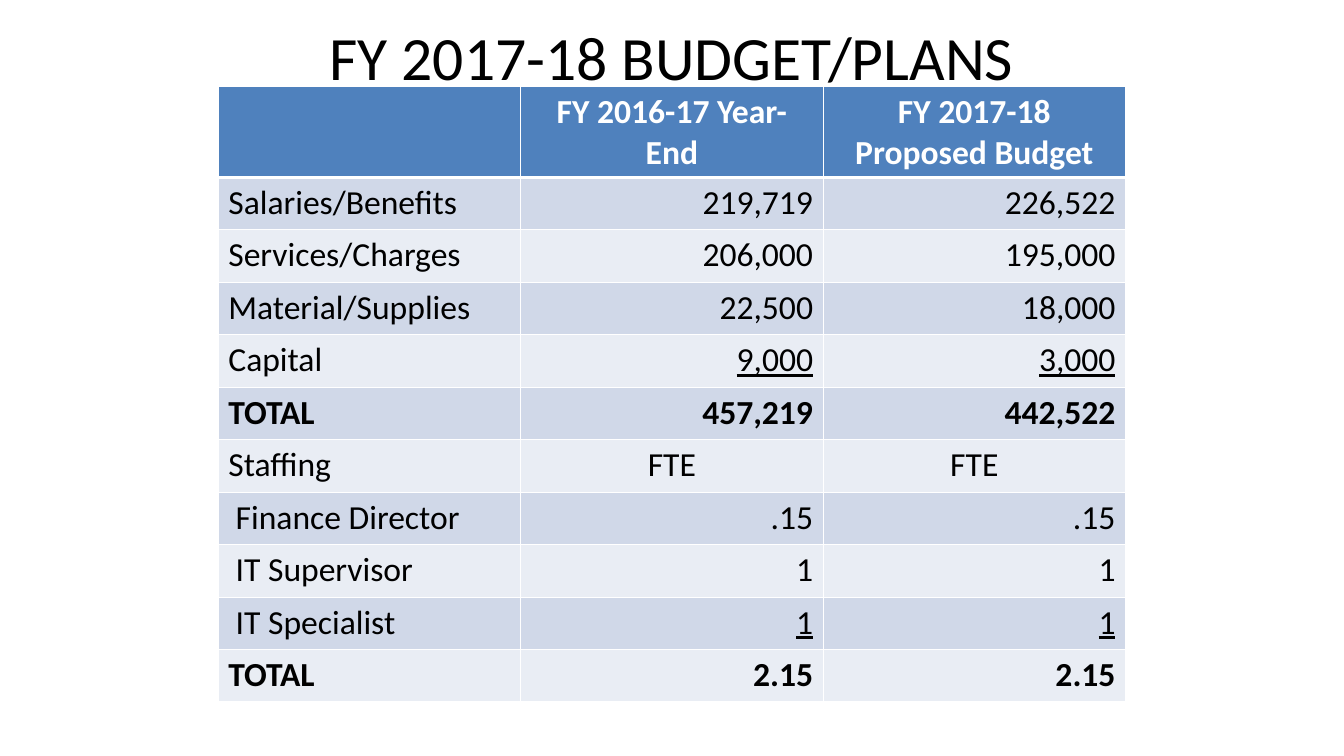
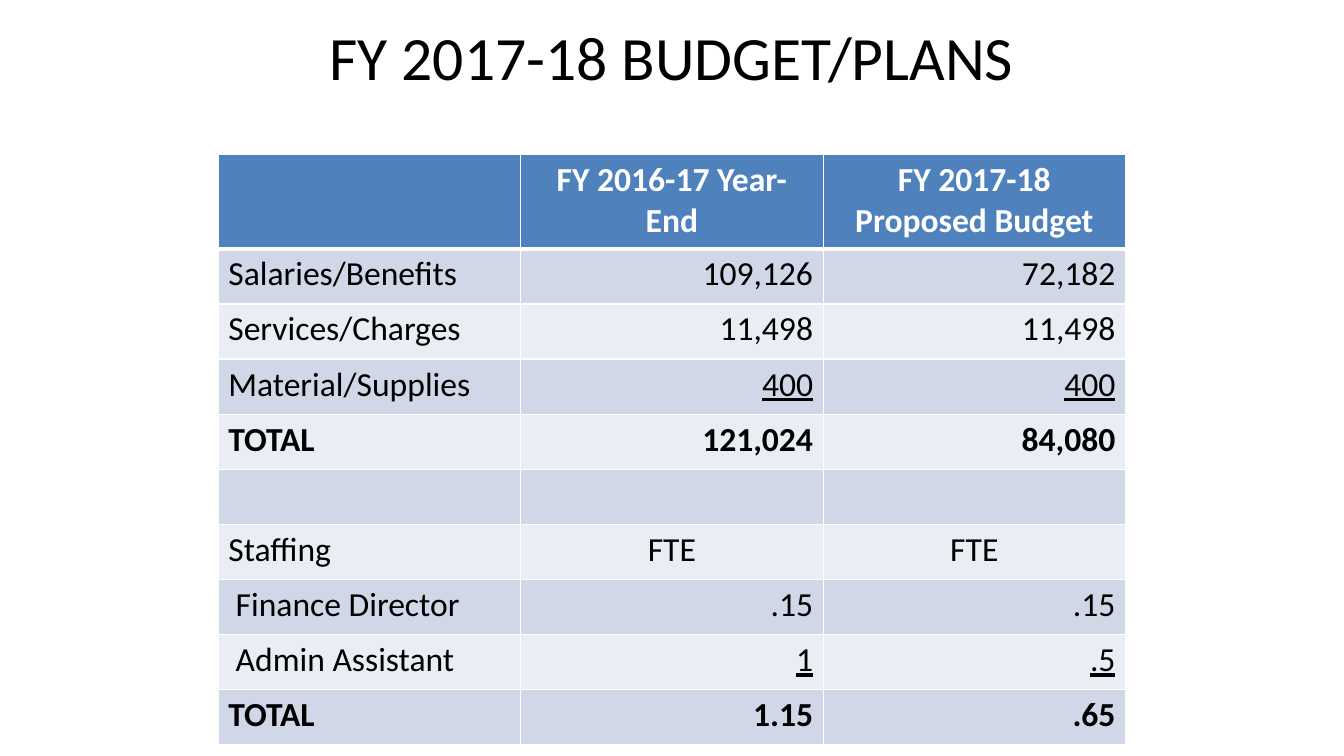
"""Build two budget slides, each with a title and a line-item table."""
from dataclasses import dataclass

from lxml import etree
from pptx import Presentation
from pptx import util as u
from pptx.dml.color import RGBColor
from pptx.enum import text as t
from pptx.oxml import ns

EMU_PER_PX = 4762.5
SLIDE_W, SLIDE_H = 2560, 1440
MARGIN = 128
TITLE_TOP, TITLE_H = 35, 143
TABLE_LEFT, COLUMN_W = 416, 576
CELL_INSET, STAFF_INDENT = 19, 14

FONT = "Calibri"
BLACK = RGBColor(0x00, 0x00, 0x00)
WHITE = RGBColor(0xFF, 0xFF, 0xFF)
HEADER_BLUE = RGBColor(0x4F, 0x81, 0xBD)
BANDS = (RGBColor(0xD0, 0xD8, 0xE8), RGBColor(0xE9, 0xED, 0xF4))

LEFT, CENTER, RIGHT = t.PP_ALIGN.LEFT, t.PP_ALIGN.CENTER, t.PP_ALIGN.RIGHT
TITLE = "FY 2017-18 BUDGET/PLANS"


@dataclass(frozen=True)
class BudgetRow:
    label: str = ""
    year_end: str = ""
    proposed: str = ""
    align: t.PP_ALIGN = RIGHT
    bold: bool = False
    underline: bool = False
    indent: int = 0


@dataclass(frozen=True)
class Budget:
    top: int
    header_h: int
    row_h: int
    rows: tuple[BudgetRow, ...]


HEADER = BudgetRow("", "FY 2016-17 Year- End", "FY 2017-18 Proposed Budget", CENTER, bold=True)
STAFFING = BudgetRow("Staffing", "FTE", "FTE", CENTER)
DIRECTOR = BudgetRow("Finance Director", ".15", ".15", indent=STAFF_INDENT)

BUDGETS = (
    Budget(165, 173, 100, (
        BudgetRow("Salaries/Benefits", "219,719", "226,522"),
        BudgetRow("Services/Charges", "206,000", "195,000"),
        BudgetRow("Material/Supplies", "22,500", "18,000"),
        BudgetRow("Capital", "9,000", "3,000", underline=True),
        BudgetRow("TOTAL", "457,219", "442,522", bold=True),
        STAFFING,
        DIRECTOR,
        BudgetRow("IT Supervisor", "1", "1", indent=STAFF_INDENT),
        BudgetRow("IT Specialist", "1", "1", underline=True, indent=STAFF_INDENT),
        BudgetRow("TOTAL", "2.15", "2.15", bold=True),
    )),
    Budget(294, 180, 105, (
        BudgetRow("Salaries/Benefits", "109,126", "72,182"),
        BudgetRow("Services/Charges", "11,498", "11,498"),
        BudgetRow("Material/Supplies", "400", "400", underline=True),
        BudgetRow("TOTAL", "121,024", "84,080", bold=True),
        BudgetRow(),
        STAFFING,
        DIRECTOR,
        BudgetRow("Admin Assistant", "1", ".5", underline=True, indent=STAFF_INDENT),
        BudgetRow("TOTAL", "1.15", ".65", bold=True),
    )),
)


def px(length: int) -> u.Emu:
    return u.Emu(round(length * EMU_PER_PX))


def write(frame, wording: str, *, size: int = 24, color: RGBColor = BLACK,
          align: t.PP_ALIGN = LEFT, bold: bool = False, underline: bool = False) -> None:
    paragraph = frame.paragraphs[0]
    paragraph.alignment = align
    paragraph.font.size = u.Pt(size)
    if not wording:
        return
    run = paragraph.add_run()
    run.text = wording
    run.font.name = FONT
    run.font.size = u.Pt(size)
    run.font.color.rgb = color
    run.font.bold = bold
    run.font.underline = underline


def set_borders(cell, top: int, bottom: int) -> None:
    properties = cell._tc.get_or_add_tcPr()
    for edge, points in (("lnL", 1), ("lnR", 1), ("lnT", top), ("lnB", bottom)):
        line = etree.SubElement(properties, ns.qn(f"a:{edge}"), w=str(u.Pt(points)))
        fill = etree.SubElement(line, ns.qn("a:solidFill"))
        etree.SubElement(fill, ns.qn("a:srgbClr"), val=str(WHITE))


def add_title(slide) -> None:
    title = slide.shapes.add_textbox(
        px(MARGIN), px(TITLE_TOP), px(SLIDE_W - 2 * MARGIN), px(TITLE_H))
    frame = title.text_frame
    frame.word_wrap = True
    frame.margin_top = frame.margin_bottom = 0
    frame.vertical_anchor = t.MSO_ANCHOR.MIDDLE
    write(frame, TITLE, size=44, align=CENTER)


def fill_row(table, index: int, row: BudgetRow) -> None:
    is_header = index == 0
    for column, wording in enumerate((row.label, row.year_end, row.proposed)):
        is_label = column == 0
        cell = table.cell(index, column)
        set_borders(cell, top=3 if index == 1 else 1, bottom=3 if is_header else 1)
        cell.fill.solid()
        cell.fill.fore_color.rgb = HEADER_BLUE if is_header else BANDS[(index - 1) % 2]
        cell.margin_left = px(CELL_INSET + (row.indent if is_label else 0))
        write(cell.text_frame, wording, color=WHITE if is_header else BLACK,
              align=LEFT if is_label else row.align, bold=row.bold,
              underline=row.underline and not is_label)


def add_budget(slide, budget: Budget) -> None:
    rows = (HEADER, *budget.rows)
    height = budget.header_h + budget.row_h * len(budget.rows)
    table = slide.shapes.add_table(
        len(rows), 3, px(TABLE_LEFT), px(budget.top), px(3 * COLUMN_W), px(height)).table
    for column in table.columns:
        column.width = px(COLUMN_W)
    for index, row in enumerate(rows):
        table.rows[index].height = px(budget.row_h if index else budget.header_h)
        fill_row(table, index, row)


def main() -> None:
    deck = Presentation()
    deck.slide_width, deck.slide_height = px(SLIDE_W), px(SLIDE_H)
    for budget in BUDGETS:
        slide = deck.slides.add_slide(deck.slide_layouts[6])
        add_title(slide)
        add_budget(slide, budget)
    deck.save("out.pptx")


if __name__ == "__main__":
    main()
